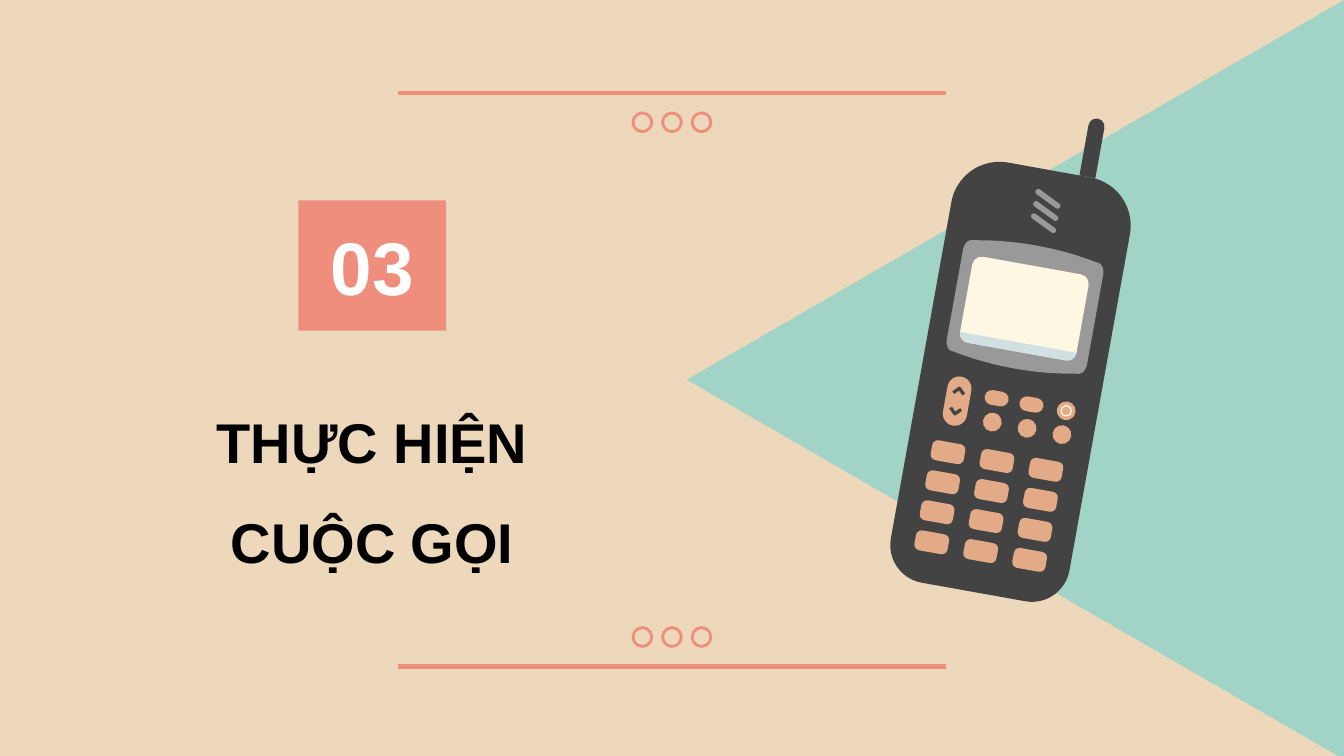
from math import cos, radians, sin

from lxml.etree import SubElement
from pptx import Presentation
from pptx.dml.color import RGBColor
from pptx.enum.shapes import MSO_CONNECTOR, MSO_SHAPE
from pptx.enum.text import MSO_ANCHOR, MSO_AUTO_SIZE, PP_ALIGN
from pptx.oxml.ns import qn
from pptx.util import Inches, Pt

SLIDE_WIDTH = Inches(10)
SLIDE_HEIGHT = SLIDE_WIDTH * 9 // 16
CELL = SLIDE_WIDTH / 100

SAND, TEAL, CORAL = "EDD8BB", "A2D3C7", "EF8E7D"
DARK, GRAY, CREAM, ICE, KEY = "434343", "999999", "FEF7E1", "D0E0E3", "E2AA87"
TILT = 10.2


def cells(count):
    return round(count * CELL)


def color(value):
    return RGBColor.from_string(value)


def paint(shape, fill=None, line=None, weight=1):
    shape.shadow.inherit = False
    if fill:
        shape.fill.solid()
        shape.fill.fore_color.rgb = color(fill)
    else:
        shape.fill.background()
    if line:
        shape.line.color.rgb = color(line)
        shape.line.width = Pt(weight)
    else:
        shape.line.fill.background()


def add_preset(shapes, kind, box, adjustments=(), rotation=0, **style):
    shape = shapes.add_shape(kind, *map(cells, box))
    for index, value in enumerate(adjustments):
        shape.adjustments[index] = value
    shape.rotation = rotation
    paint(shape, **style)
    return shape


def write(shape, text, size, text_color, spacing=None):
    frame = shape.text_frame
    frame.word_wrap = True
    frame.margin_left = frame.margin_right = cells(1)
    frame.margin_top = frame.margin_bottom = cells(1)
    paragraph = frame.paragraphs[0]
    paragraph.alignment = PP_ALIGN.CENTER
    if spacing:
        paragraph.line_spacing = spacing
    run = paragraph.add_run()
    run.text = text
    run.font.name = "Arial"
    run.font.size = Pt(size)
    run.font.bold = True
    run.font.color.rgb = color(text_color)


def add_number(slide, box, text):
    title = slide.shapes.title
    title.left, title.top, title.width, title.height = map(cells, box)
    paint(title, CORAL)
    write(title, text, 40, "FFFFFF")
    title.text_frame.vertical_anchor = MSO_ANCHOR.MIDDLE
    title.text_frame.auto_size = MSO_AUTO_SIZE.NONE


def add_heading(slide, box, text):
    heading = slide.shapes.add_textbox(*map(cells, box))
    write(heading, text, 30, "000000", 1.5)
    heading.text_frame.auto_size = MSO_AUTO_SIZE.SHAPE_TO_FIT_TEXT


def add_rule(slide, box, rule_at_top):
    left, top, width, height = box
    rule_y = top if rule_at_top else top + height
    rule = slide.shapes.add_connector(
        MSO_CONNECTOR.STRAIGHT, *map(cells, (left, rule_y, left + width, rule_y)))
    rule.line.color.rgb = color(CORAL)
    rule.line.width = Pt(2.25)
    SubElement(rule._element.spPr, qn("a:effectLst"))
    diameter, step = 1.4, 2.2
    dots_top = top + height - diameter if rule_at_top else top
    dots = slide.shapes.add_group_shape()
    for position in (-1, 0, 1):
        dot_left = left + (width - diameter) / 2 + position * step
        add_preset(dots.shapes, MSO_SHAPE.OVAL, (dot_left, dots_top, diameter, diameter),
                   line=CORAL, weight=1.5)


def curve(start, first, second, end, steps=12):
    points = []
    for index in range(steps + 1):
        t = index / steps
        weights = ((1 - t) ** 3, 3 * t * (1 - t) ** 2, 3 * t * t * (1 - t), t ** 3)
        points.append(tuple(
            sum(weight * value for weight, value in zip(weights, axis))
            for axis in zip(start, first, second, end)))
    return points


def add_phone(slide, box):
    left, top, width, height = box
    center_x, center_y = left + width / 2, top + height / 2
    shapes = slide.shapes.add_group_shape().shapes
    cosine, sine = cos(radians(TILT)), sin(radians(TILT))

    def turned(x, y):
        return center_x + x * cosine - y * sine, center_y + x * sine + y * cosine

    def part(kind, x, y, part_width, part_height, fill, adjustments=(), rotation=TILT):
        page_x, page_y = turned(x, y)
        part_box = (page_x - part_width / 2, page_y - part_height / 2, part_width, part_height)
        add_preset(shapes, kind, part_box, adjustments, rotation, fill=fill)

    def outline(points, x, y, closed=True, **style):
        scaled = [(cells(px), cells(py)) for px, py in points]
        builder = shapes.build_freeform(*scaled[0], scale=1.0)
        builder.add_line_segments(scaled[1:], close=closed)
        shape = builder.convert_to_shape()
        page_x, page_y = turned(x, y)
        shape.left = round(cells(page_x) - shape.width / 2)
        shape.top = round(cells(page_y) - shape.height / 2)
        shape.rotation = TILT
        paint(shape, **style)

    rounded, domed = MSO_SHAPE.ROUNDED_RECTANGLE, MSO_SHAPE.ROUND_2_SAME_RECTANGLE
    part(domed, 2.88, -height / 2 - 2.2, 1.2, 4.4, DARK, (0.5, 0))
    part(domed, 0, 0, width, height, DARK, (0.27, 0.21))

    corner = curve((-5.3, -3.3), (-5.3, -3.8), (-5.1, -4.2), (-4.7, -4.2))
    arch = curve((-4.7, -4.2), (-1.6, -4.8), (1.6, -4.8), (4.7, -4.2))
    upper = corner + arch + [(-x, y) for x, y in reversed(corner)]
    outline(upper + [(-x, -y) for x, y in upper], 0.03, -5.6, fill=GRAY)
    part(rounded, 0, -5.48, 8.8, 6.5, CREAM, (0.11,))
    strip_corner = curve((4.4, 0), (4.4, 0.4), (4.1, 0.7), (3.7, 0.7))
    strip = strip_corner + [(-x, y) for x, y in reversed(strip_corner)]
    outline(strip, 0, -2.57, fill=ICE)

    for row in range(4):
        for column in (-1, 0, 1):
            part(rounded, column * 3.7, 6.05 + row * 2.27, 2.5, 1.5, KEY, (0.28,))

    part(rounded, -3.7, 2.19, 1.8, 3.7, KEY, (0.5,))
    for y, direction in ((1.42, 1), (2.95, -1)):
        chevron = [(-0.4, 0.2 * direction), (0, -0.2 * direction), (0.4, 0.2 * direction)]
        outline(chevron, -3.7, y, closed=False, line=DARK, weight=1.75)

    for column in range(3):
        x = -0.85 + column * 2.63
        if column < 2:
            part(rounded, x, 1.46, 1.8, 1.1, KEY, (0.5,))
        else:
            part(MSO_SHAPE.OVAL, x, 1.46, 1.4, 1.4, KEY)
            part(MSO_SHAPE.DONUT, x, 1.46, 0.85, 0.85, CREAM, (0.12,))
        part(MSO_SHAPE.OVAL, x, 3.26, 1.4, 1.4, KEY)

    for slot in range(3):
        part(rounded, 0.28, -13.82 + slot * 0.92, 2.2, 0.42, GRAY, (0.5,), 36)


def main():
    presentation = Presentation()
    presentation.slide_width = SLIDE_WIDTH
    presentation.slide_height = SLIDE_HEIGHT
    slide = presentation.slides.add_slide(presentation.slide_layouts[5])
    slide.background.fill.solid()
    slide.background.fill.fore_color.rgb = color(SAND)

    add_number(slide, (22.2, 14.9, 11, 9.7), "03")
    add_preset(slide.shapes, MSO_SHAPE.ISOSCELES_TRIANGLE, (47.3, 3.8, 56.5, 48.9),
               rotation=270, fill=TEAL)
    add_phone(slide, (68.5, 12.4, 13.5, 31.9))
    add_rule(slide, (29.6, 6.9, 40.8, 2.9), True)
    add_rule(slide, (29.6, 46.7, 40.8, 2.9), False)
    add_heading(slide, (12.7, 26.8, 30, 15.2), "THỰC HIỆN CUỘC GỌI")
    presentation.save("out.pptx")


if __name__ == "__main__":
    main()
